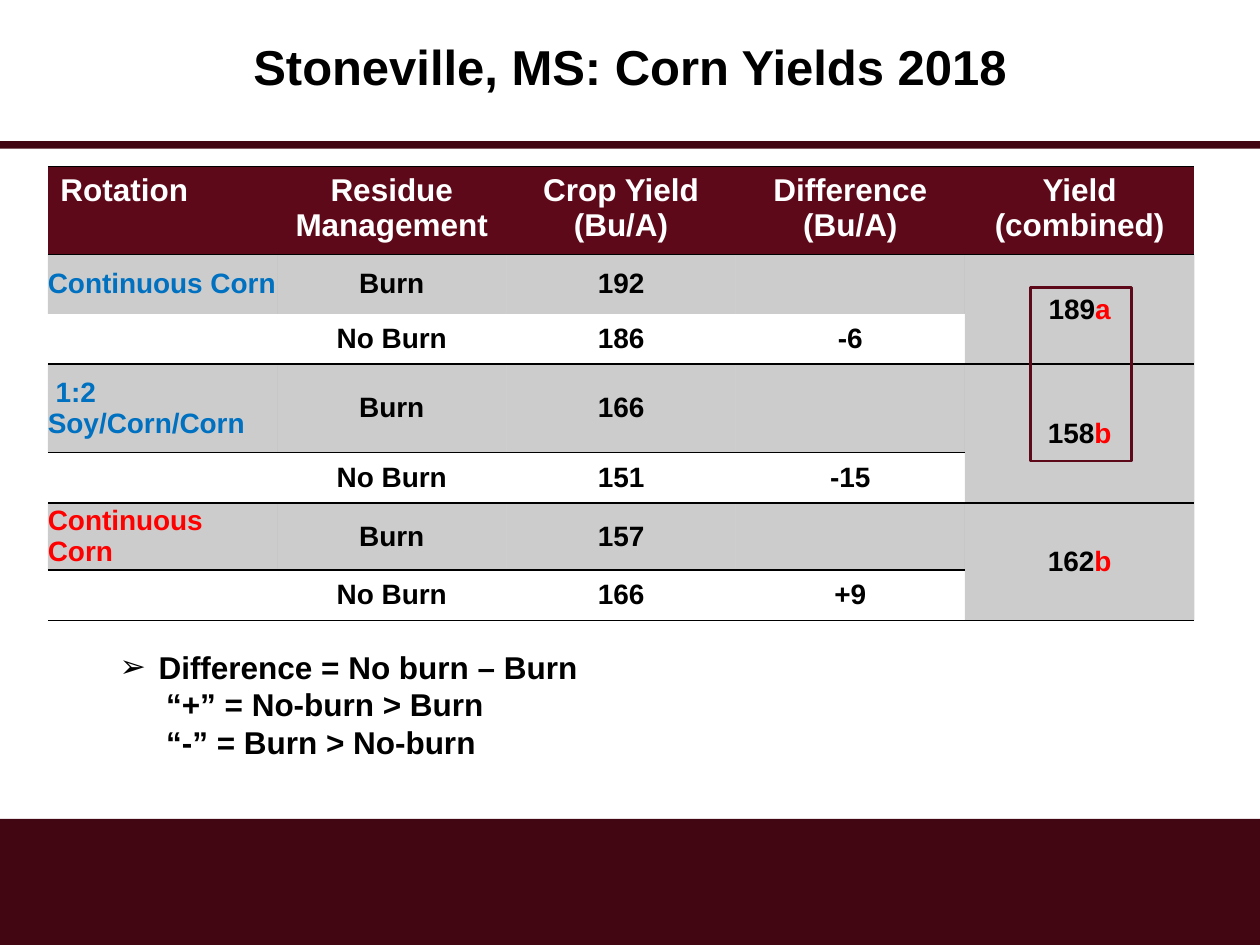
from lxml import etree
from pptx import Presentation
from pptx import util as u
from pptx.dml.color import RGBColor
from pptx.enum import shapes, text
from pptx.oxml import ns

FONT = "Arial"
BLACK, WHITE, RED, BLUE = "000000", "FFFFFF", "FF0000", "0070C0"
MAROON, DARK_MAROON = "5E091A", "410611"
LEFT, CENTER = text.PP_ALIGN.LEFT, text.PP_ALIGN.CENTER
TOP, MIDDLE = text.MSO_ANCHOR.TOP, text.MSO_ANCHOR.MIDDLE
NO_STYLE = "{2D5ABB26-0587-4C30-8999-92F81FD0307C}"

HEADERS = ["Rotation", "Residue Management", "Crop Yield\n(Bu/A)",
           "Difference\n(Bu/A)", "Yield (combined)"]
ROTATIONS = [
    ("Continuous Corn", BLUE, "192", "186", "-6", "189", "a"),
    (" 1:2 Soy/Corn/Corn", BLUE, "166", "151", "-15", "158", "b"),
    ("Continuous\nCorn", RED, "157", "166", "+9", "162", "b"),
]
ROW_HEIGHTS = [0.7, 0.47, 0.4, 0.7, 0.4, 0.47, 0.4]
COLUMN_WIDTH = 1.82


def color(hex_string):
    return RGBColor.from_string(hex_string)


def write(paragraph, content, size=18, ink=BLACK, align=LEFT):
    paragraph.alignment = align
    run = paragraph.add_run()
    run.text = content
    for font in (paragraph.font, run.font):
        font.name, font.size, font.bold = FONT, u.Pt(size), True
        font.color.rgb = color(ink)


def write_lines(frame, content, **style):
    for index, line in enumerate(content.split("\n")):
        paragraph = frame.add_paragraph() if index else frame.paragraphs[0]
        write(paragraph, line, **style)


def child(parent, tag, **attributes):
    return etree.SubElement(parent, ns.qn(tag), attributes)


class Deck:
    def __init__(self, width, height):
        self.presentation = Presentation()
        self.presentation.slide_width = u.Inches(width)
        self.presentation.slide_height = u.Inches(height)
        self.slide = self.presentation.slides.add_slide(self.presentation.slide_layouts[6])

    def rectangle(self, *box, fill=None, line=None):
        shape = self.slide.shapes.add_shape(shapes.MSO_SHAPE.RECTANGLE, *map(u.Inches, box))
        shape.shadow.inherit = False
        if fill:
            shape.fill.solid()
            shape.fill.fore_color.rgb = color(fill)
        else:
            shape.fill.background()
        if line:
            shape.line.color.rgb = color(line)
            shape.line.width = u.Pt(1.5)
        else:
            shape.line.fill.background()

    def text_box(self, *box, anchor=TOP):
        frame = self.slide.shapes.add_textbox(*map(u.Inches, box)).text_frame
        frame.word_wrap = True
        frame.vertical_anchor = anchor
        return frame

    def indent(self, paragraph, margin, first=0, bullet=None):
        properties = paragraph._p.get_or_add_pPr()
        properties.set("marL", str(u.Inches(margin)))
        properties.set("indent", str(u.Inches(first)))
        if bullet:
            child(properties, "a:buFont", typeface=FONT)
            child(properties, "a:buChar", char=bullet)

    def table(self, left, top, column_count, column_width, row_heights):
        frame = self.slide.shapes.add_table(
            len(row_heights), column_count, u.Inches(left), u.Inches(top),
            u.Inches(column_width * column_count), u.Inches(sum(row_heights)))
        table = frame.table
        table.first_row = table.horz_banding = False
        table._tbl.tblPr.find(ns.qn("a:tableStyleId")).text = NO_STYLE
        for column in table.columns:
            column.width = u.Inches(column_width)
        for row, height in zip(table.rows, row_heights):
            row.height = u.Inches(height)
        return table

    def cell(self, cell, content="", fill=None, alpha=None, inset=True,
             anchor=MIDDLE, **style):
        cell.vertical_anchor = anchor
        if not inset:
            cell.margin_left = cell.margin_right = 0
            cell.margin_top = cell.margin_bottom = 0
        if fill:
            cell.fill.solid()
            cell.fill.fore_color.rgb = color(fill)
            if alpha:
                tint = cell._tc.tcPr.find(".//" + ns.qn("a:srgbClr"))
                child(tint, "a:alpha", val=str(alpha * 1000))
        else:
            cell.fill.background()
        write_lines(cell.text_frame, content, **style)

    def border(self, cell, side):
        line = etree.Element(ns.qn(side), w=str(u.Pt(1)))
        child(child(line, "a:solidFill"), "a:srgbClr", val=BLACK)
        cell._tc.get_or_add_tcPr().insert(0, line)


def add_yield_table(deck):
    table = deck.table(0.38, 1.32, len(HEADERS), COLUMN_WIDTH, ROW_HEIGHTS)
    for column, header in enumerate(HEADERS):
        deck.cell(table.cell(0, column), header, fill=MAROON, anchor=TOP,
                  ink=WHITE, align=CENTER if column else LEFT)
    shade = dict(fill=BLACK, alpha=20)
    for index, entry in enumerate(ROTATIONS):
        name, ink, burned, unburned, difference, combined, letter = entry
        first = 1 + 2 * index
        rows = [(name, "Burn", burned, ""), ("", "No Burn", unburned, difference)]
        for offset, values in enumerate(rows):
            for column, value in enumerate(values):
                deck.cell(table.cell(first + offset, column), value, inset=False,
                          size=16, ink=BLACK if column else ink,
                          align=CENTER if column else LEFT,
                          **({} if offset else shade))
        total = table.cell(first, 4)
        total.merge(table.cell(first + 1, 4))
        deck.cell(total, combined, inset=False, size=16, align=CENTER, **shade)
        write(total.text_frame.paragraphs[0], letter, size=16, ink=RED, align=CENTER)
    for row in (0, 2, 3, 4, 5, 6):
        for column in range(len(HEADERS)):
            if column < 4 or row % 2 == 0:
                deck.border(table.cell(row, column), "a:lnB")
    for row in (1, 3, 5):
        deck.border(table.cell(row, 4), "a:lnB")
    for column in range(len(HEADERS)):
        deck.border(table.cell(0, column), "a:lnT")


def main():
    deck = Deck(10, 7.5)
    deck.rectangle(0, 6.5, 10, 1, fill=DARK_MAROON)
    title = deck.text_box(0, 0, 10, 1.11, anchor=MIDDLE)
    title.paragraphs[0].line_spacing = 0.9
    write_lines(title, "Stoneville, MS: Corn Yields 2018", size=28, align=CENTER)
    deck.rectangle(0, 1.12, 10, 0.06, fill=DARK_MAROON)
    add_yield_table(deck)

    legend = deck.text_box(0.85, 5.09, 4.49, 1.01)
    deck.indent(legend.paragraphs[0], 0.31, -0.31, "➢")
    write_lines(legend, "Difference = No burn – Burn\n“+” = No-burn > Burn\n“-” = Burn > No-burn")
    for paragraph in legend.paragraphs[1:]:
        deck.indent(paragraph, 0.37)

    deck.rectangle(8.18, 2.28, 0.8, 1.38, line=MAROON)
    deck.presentation.save("out.pptx")


if __name__ == "__main__":
    main()
